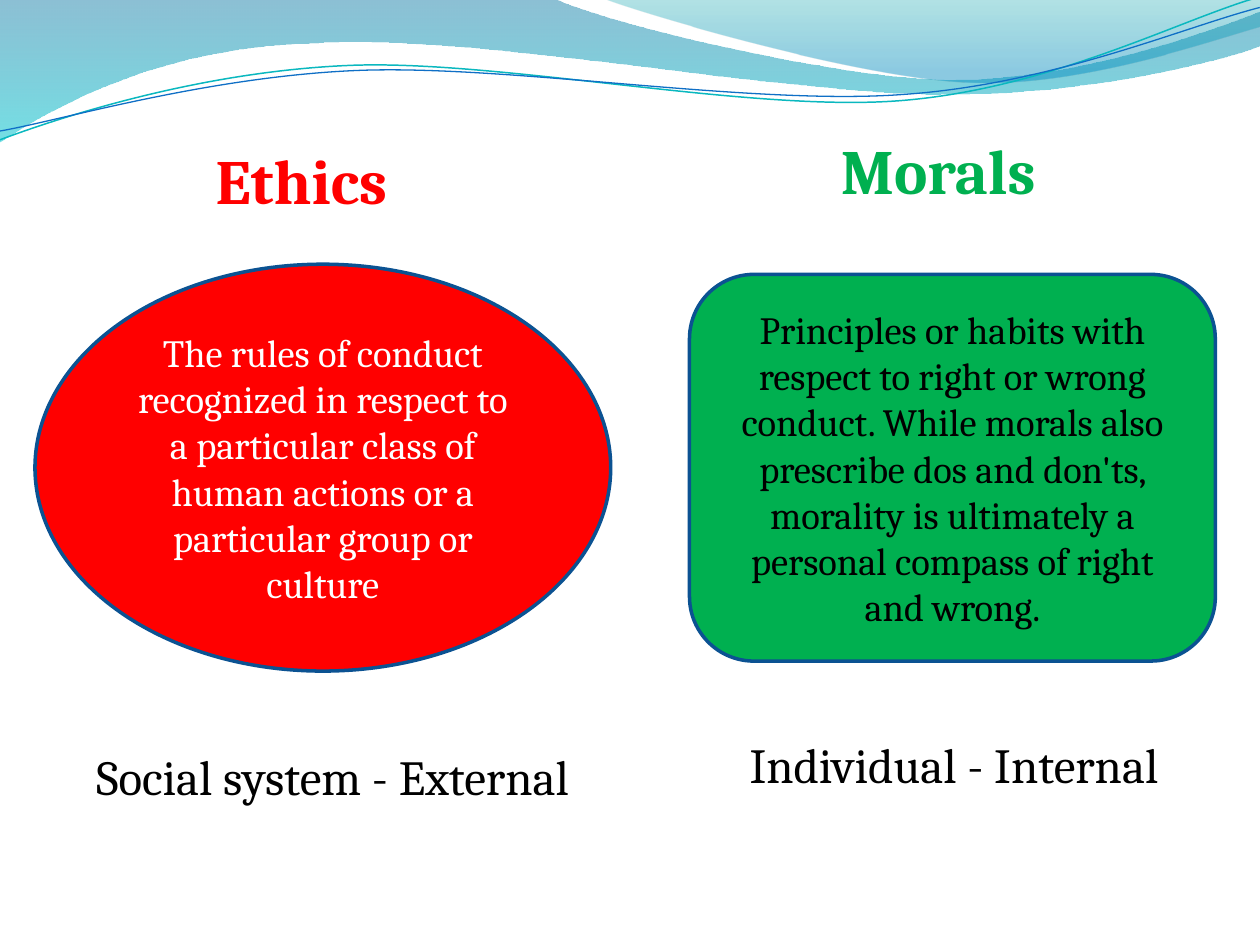
from math import cos, radians, sin

from pptx import Presentation
from pptx.dml.color import RGBColor
from pptx.enum.shapes import MSO_SHAPE
from pptx.enum.text import MSO_ANCHOR, MSO_AUTO_SIZE, PP_ALIGN
from pptx.oxml.ns import qn
from pptx.util import Pt
from lxml.etree import SubElement

# Content and colours; all lengths in points
COLORS = {"red": "FF0000", "green": "00B050", "navy": "0B5292", "black": "000000",
          "white": "FFFFFF", "teal": "0AB8BF", "blue": "0F6FC6"}
FONT = "Cambria"
TILT = -2.7  # rotation of the thin waves, in degrees

# Wave outlines: a 2-tuple is a straight step, a 6-tuple a Bezier curve
# Gradient stops: position, colour, opacity in percent
BANDS = [
    ([(0, 0), (316.8, -0.7), (342.7, 12.2, 478.1, 45.4, 545.8, 45.4),
      (614.2, 45.4, 689.8, 18.7, 720, 6.5), (720.7, 25.9),
      (707.8, 31.7, 626.4, 54.7, 537.1, 54), (447.8, 54, 275, 20.2, 185, 24.5),
      (92.9, 25.9, 33.1, 59.8, -0.7, 81.4), (0, 0)],
     [(0, "0074A1", 45), (1, "00C6CF", 55)]),
    ([(344.9, -0.7), (366.5, 7.9, 491, 44.6, 553.7, 46.8),
      (616.3, 49.7, 691.9, 23, 720, 15.1), (720, 0), (344.9, -0.7)],
     [(0, "00A1A9", 30), (0.8, "008BBF", 45)]),
]
LINES = [
    ([(0, 79.9), (34.6, 67, 113.8, 41, 199.4, 37.4),
      (284.4, 33.8, 427, 64.1, 513.4, 57.6),
      (599.8, 51.1, 675.4, 10.8, 718.6, -1.4)], "teal", 0.85),
    ([(0, 74.9), (33.8, 69.1, 118.1, 43.9, 203.8, 40.3),
      (290.2, 36.7, 429.8, 60.5, 516.2, 54),
      (601.9, 48.2, 677.5, 15.1, 720, 4.3)], "blue", 0.75),
]
PANELS = [
    (MSO_SHAPE.OVAL, (20, 151, 329, 232.5), "red", "white",
     "The rules of conduct recognized in respect to a particular class of "
     "human actions or a particular group or culture"),
    (MSO_SHAPE.ROUNDED_RECTANGLE, (394, 156.8, 300.5, 221), "green", "black",
     "Principles or habits with respect to right or wrong conduct. While morals also "
     "prescribe dos and don'ts, morality is ultimately a personal compass of right and wrong."),
]
LABELS = [
    ("Social system - External", (48, 423, 303, 41.2), dict(size=28)),
    ("Individual - Internal", (421.2, 416.2, 262, 41.2), dict(size=28)),
    ("Ethics", (116.2, 77.2, 119.5, 51), dict(size=36, color="red", bold=True)),
    ("Morals", (473.4, 71.6, 132.5, 51), dict(size=36, color="green", bold=True)),
]


def rgb(name):
    return RGBColor.from_string(COLORS.get(name, name))


def write(tf, text, size=22, color="black", bold=False, align=PP_ALIGN.LEFT):
    p = tf.paragraphs[0]
    p.alignment = align
    r = p.add_run()
    r.text = text
    r.font.name, r.font.size, r.font.bold = FONT, Pt(size), bold
    r.font.color.rgb = rgb(color)


def level(steps, angle):
    """Turn the steps back by angle about the middle of their end points."""
    (x0, y0), (x1, y1) = steps[0], steps[-1][-2:]
    cx, cy = (x0 + x1) / 2, (y0 + y1) / 2
    c, d = cos(radians(angle)), sin(radians(angle))
    turned = []
    for step in steps:
        flat = []
        for x, y in zip(step[::2], step[1::2]):
            flat += [cx + (x - cx) * c + (y - cy) * d, cy - (x - cx) * d + (y - cy) * c]
        turned.append(flat)
    return turned


def add_outline(shapes, steps, close):
    """Lay all points as line segments, then join each curve's three into one."""
    pts = [(Pt(x), Pt(y)) for st in steps for x, y in zip(st[::2], st[1::2])]
    fb = shapes.build_freeform(*pts[0])
    fb.add_line_segments(pts[1:], close=close)
    sp = fb.convert_to_shape()
    sp.shadow.inherit = False
    segments = iter(list(sp._element.iter(qn("a:lnTo"))))
    for step in steps[1:]:
        first = next(segments)
        if len(step) == 6:
            first.tag = qn("a:cubicBezTo")
            for _ in range(2):
                extra = next(segments)
                first.append(extra[0])
                extra.getparent().remove(extra)
    return sp


prs = Presentation()
prs.slide_width, prs.slide_height = Pt(720), Pt(540)
s = prs.slides.add_slide(prs.slide_layouts[6])

# Header waves
for steps, stops in BANDS:
    sp = add_outline(s.shapes, steps, True)
    sp.line.fill.background()
    sp.fill.gradient()
    sp.fill.gradient_angle = 270
    for stop, (pos, color, _) in zip(sp.fill.gradient_stops, stops):
        stop.position, stop.color.rgb = pos, rgb(color)
    for clr, (_, _, opacity) in zip(sp._element.iter(qn("a:srgbClr")), stops):
        SubElement(clr, qn("a:alpha")).set("val", str(opacity * 1000))
for steps, color, width in LINES:
    sp = add_outline(s.shapes, level(steps, TILT), False)
    sp.rotation = TILT
    sp.fill.background()
    sp.line.color.rgb, sp.line.width = rgb(color), Pt(width)

# Definition panels
for kind, box, fill, color, text in PANELS:
    sp = s.shapes.add_shape(kind, *map(Pt, box))
    sp.shadow.inherit = False
    sp.fill.solid()
    sp.fill.fore_color.rgb = rgb(fill)
    sp.line.color.rgb, sp.line.width = rgb("navy"), Pt(2)
    tf = sp.text_frame
    tf.word_wrap, tf.vertical_anchor = True, MSO_ANCHOR.MIDDLE
    write(tf, text, color=color, align=PP_ALIGN.CENTER)

# Headings and captions
for text, box, style in LABELS:
    tf = s.shapes.add_textbox(*map(Pt, box)).text_frame
    tf.word_wrap, tf.auto_size = False, MSO_AUTO_SIZE.SHAPE_TO_FIT_TEXT
    write(tf, text, **style)

prs.save("out.pptx")
